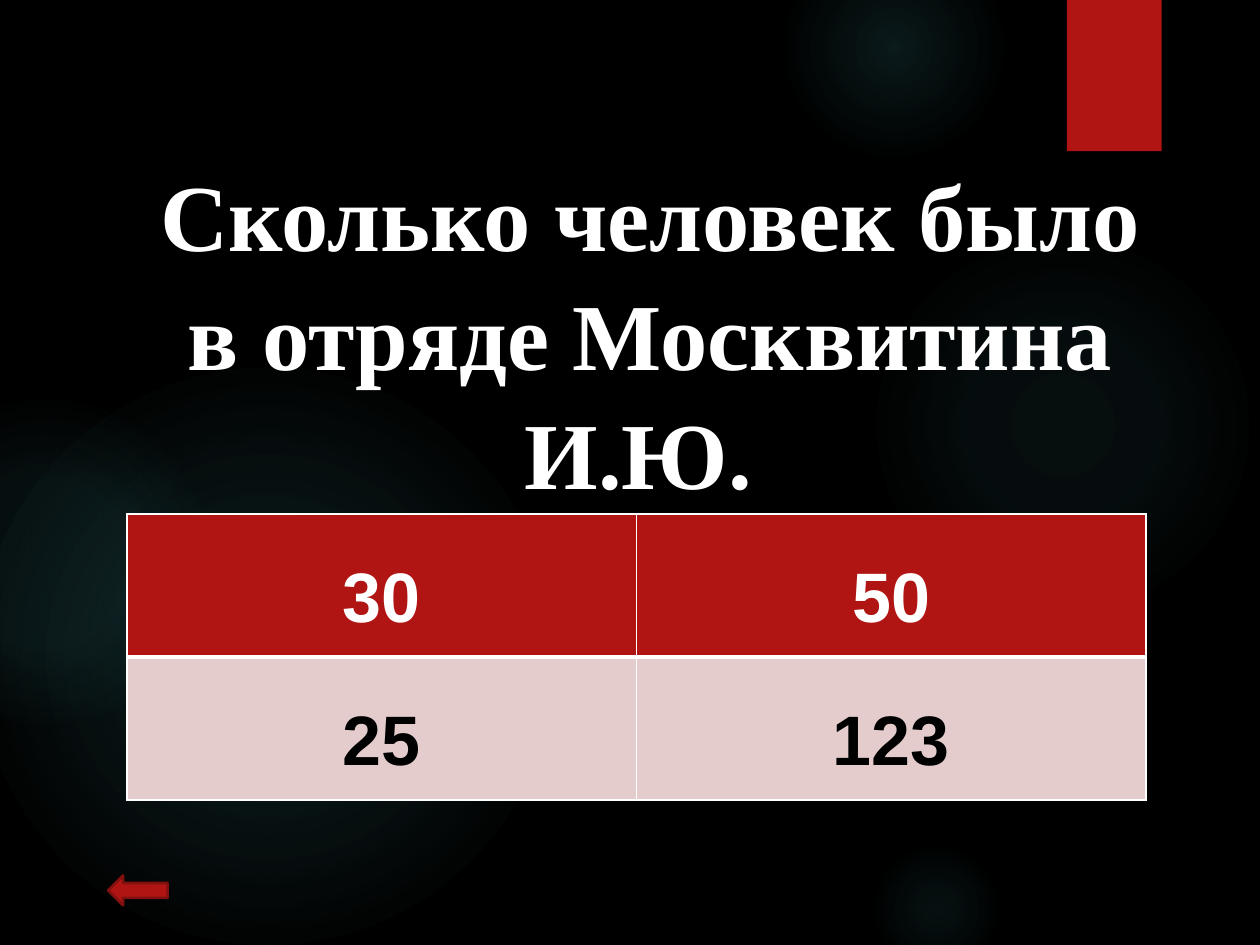
from lxml.etree import SubElement
from pptx import Presentation
from pptx.dml.color import RGBColor
from pptx.enum.shapes import MSO_SHAPE
from pptx.enum.text import MSO_ANCHOR, MSO_AUTO_SIZE, PP_ALIGN
from pptx.oxml.ns import qn
from pptx.util import Cm, Pt

INK = {"black": "000000", "white": "FFFFFF", "red": "B01513",
       "dark": "82100E", "pink": "E4CCCC", "glow": "50B9C1"}


def rgb(name):
    return RGBColor.from_string(INK[name])


def node(root, tag, **attrs):
    return SubElement(root, qn(tag), {key: str(val) for key, val in attrs.items()})


def write(frame, text, font="Arial", size=40, color="white", space=1.5):
    para = frame.paragraphs[0]
    para.alignment = PP_ALIGN.CENTER
    para.line_spacing = space
    run = para.add_run()
    run.text = text
    run.font.name = font
    run.font.size = Pt(size)
    run.font.bold = True
    run.font.color.rgb = rgb(color)


class Deck:
    def __init__(self):
        self.show = Presentation()
        self.show.slide_width = Cm(25.4)
        self.show.slide_height = Cm(19.05)
        self.slide = self.show.slides.add_slide(self.show.slide_layouts[5])
        fill = self.slide.background.fill
        fill.solid()
        fill.fore_color.rgb = rgb("black")

    def shape(self, kind, box, color, edge=None):
        item = self.slide.shapes.add_shape(kind, *map(Cm, box))
        item.shadow.inherit = False
        item.fill.solid()
        item.fill.fore_color.rgb = rgb(color)
        if edge:
            item.line.color.rgb = rgb(edge)
            item.line.width = Pt(1.5)
        else:
            item.line.fill.background()
        return item

    def glow(self, left, top, size, stops):
        orb = self.shape(MSO_SHAPE.OVAL, (left, top, size, size), "glow")
        props = orb.element.spPr
        solid = props.find(qn("a:solidFill"))
        grad = node(props, "a:gradFill", rotWithShape=1)
        props.replace(solid, grad)
        marks = node(grad, "a:gsLst")
        for place, alpha in stops:
            stop = node(marks, "a:gs", pos=place * 1000)
            tint = node(stop, "a:srgbClr", val=INK["glow"])
            node(tint, "a:alpha", val=alpha * 1000)
        route = node(grad, "a:path", path="circle")
        node(route, "a:fillToRect", l=50000, t=50000, r=50000, b=50000)

    def title(self, text, box):
        head = self.slide.shapes.title
        tree = head.element.getparent()
        tree.append(head.element)
        head.left, head.top, head.width, head.height = map(Cm, box)
        frame = head.text_frame
        frame.word_wrap = True
        frame.auto_size = MSO_AUTO_SIZE.NONE
        frame.vertical_anchor = MSO_ANCHOR.BOTTOM
        write(frame, text, font="Times New Roman", size=54, space=1.05)

    def border(self, cell, widths):
        props = cell._tc.get_or_add_tcPr()
        for spot, (side, width) in enumerate(widths.items()):
            line = node(props, f"a:{side}", w=Pt(width))
            props.insert(spot, line)
            fill = node(line, "a:solidFill")
            node(fill, "a:srgbClr", val=INK["white"])

    def table(self, rows, box, looks):
        grid = self.slide.shapes.add_table(len(rows), len(rows[0]), *map(Cm, box)).table
        for r, (row, (back, color, top, base)) in enumerate(zip(rows, looks)):
            for c, text in enumerate(row):
                cell = grid.cell(r, c)
                cell.fill.solid()
                cell.fill.fore_color.rgb = rgb(back)
                write(cell.text_frame, text, color=color)
                self.border(cell, {"lnL": 1, "lnR": 1, "lnT": top, "lnB": base})


def main():
    deck = Deck()
    orbs = [
        (17.5, 4.65, 7.82, [(0, 7), (36, 6), (69, 0)]),
        (15.8, -1.27, 4.45, [(0, 14), (36, 7), (73, 0)]),
        (17.5, 16.94, 2.74, [(0, 9), (36, 5), (66, 0)]),
        (-0.43, 7.42, 11.63, [(0, 11), (36, 10), (75, 0)]),
        (-2.34, 8.05, 6.55, [(0, 8), (36, 8), (72, 0)]),
    ]
    for orb in orbs:
        deck.glow(*orb)
    deck.shape(MSO_SHAPE.RECTANGLE, (21.51, 0, 1.91, 3.05), "red")
    deck.shape(MSO_SHAPE.LEFT_ARROW, (2.18, 17.65, 1.2, 0.6), "red", edge="dark")
    deck.title("Сколько человек было в отряде Москвитина И.Ю. ",
               (2.59, 3.18, 21.03, 7.19))
    deck.table([["30", "50"], ["25", "123"]], (2.56, 10.36, 20.54, 5.77),
               [("red", "white", 1, 3), ("pink", "black", 3, 1)])
    deck.show.save("out.pptx")


if __name__ == "__main__":
    main()
